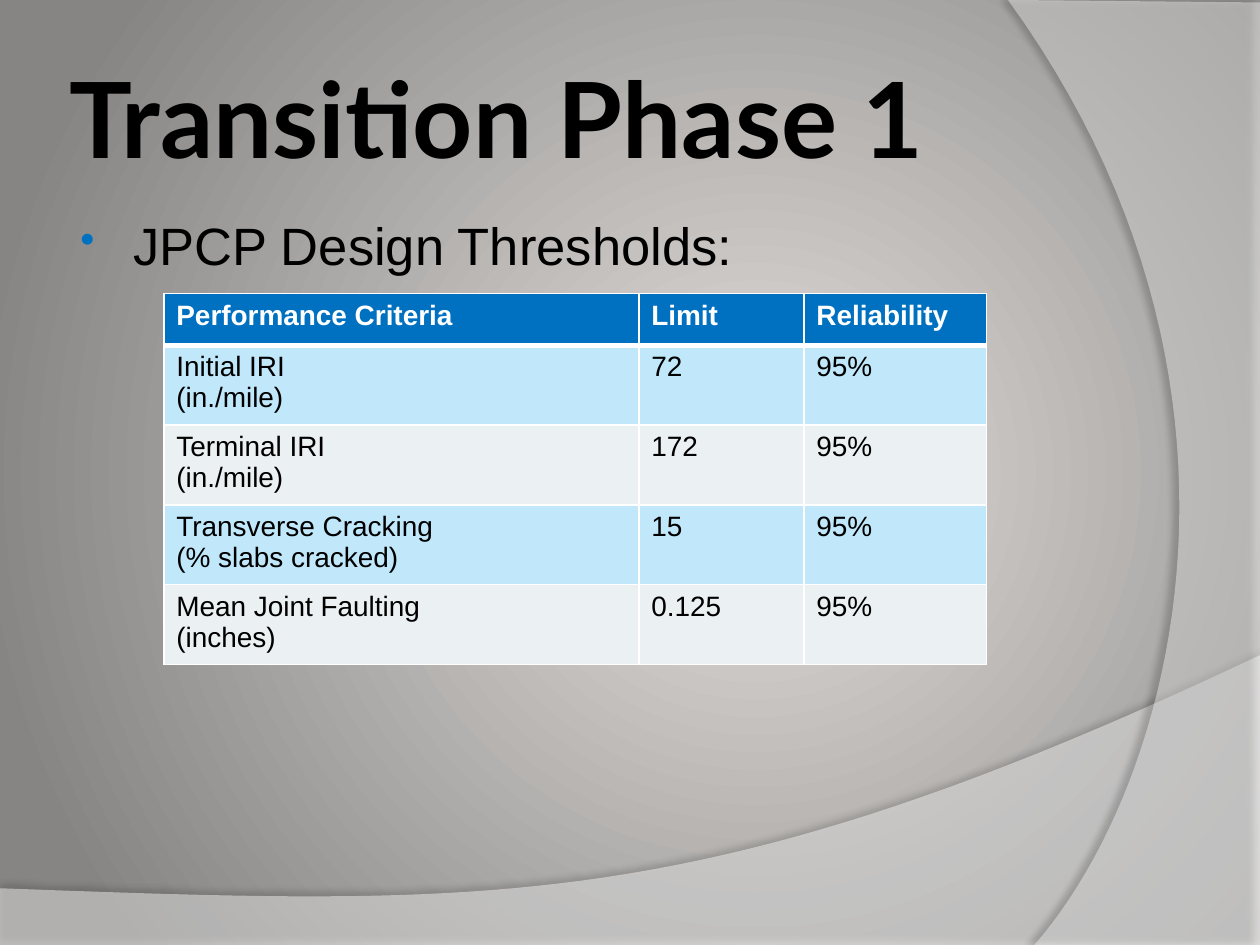
"""Build the slide on JPCP design thresholds."""
from dataclasses import dataclass

from lxml.etree import SubElement
from pptx import Presentation
from pptx.dml.color import RGBColor
from pptx.enum.text import MSO_ANCHOR, MSO_AUTO_SIZE
from pptx.oxml import parse_xml
from pptx.oxml.ns import nsdecls, qn
from pptx.slide import Slide
from pptx.table import _Cell as Cell
from pptx.text.text import TextFrame, _Paragraph as Para
from pptx.util import Inches, Pt

Point = tuple[float, float]


@dataclass(frozen=True)
class Theme:
    glow: str = "E0DDDA"
    edge: str = "878583"
    white: str = "FFFFFF"
    black: str = "000000"
    blue: str = "0070C0"
    bands: tuple[str, str] = ("C0E8FA", "EBF0F2")
    head: str = "Lato"
    body: str = "Arial"
    title: int = 60
    lead: int = 30
    cell: int = 16


@dataclass(frozen=True)
class Wave:
    start: Point
    curve: tuple[Point, Point, Point]
    rest: tuple[Point, ...]
    alpha: int
    shade: int
    dist: float
    angle: int


@dataclass(frozen=True)
class Limit:
    name: str
    unit: str
    value: str
    trust: str = "95%"


THEME = Theme()
WAVES = (
    Wave((10, 5.2), ((5.59, 7.29), (3.91, 7.19), (0, 7.05)),
         ((0, 7.51), (10, 7.51)), 45, 35, 3.5, 270),
    Wave((8.21, 7.5), ((9.35, 6.19), (10.18, 3), (8, 0)),
         ((10, 0.02), (10, 7.5)), 40, 45, 4, 180),
)
HEADS = ("Performance Criteria", "Limit", "Reliability")
LIMITS = (
    Limit("Initial IRI", "(in./mile)", "72"),
    Limit("Terminal IRI", "(in./mile)", "172"),
    Limit("Transverse Cracking", "(% slabs cracked)", "15"),
    Limit("Mean Joint Faulting", "(inches)", "0.125"),
)
WIDTHS = (3.77, 1.31, 1.45)
ROW = 0.41
STEPS = 48


def paint(slide: Slide) -> None:
    """Give the slide its round gradient."""
    slide.background.fill.solid()
    props = slide.background.fill._xPr
    props.remove(props.find(qn("a:solidFill")))
    props.insert(0, parse_xml(
        f'<a:gradFill rotWithShape="1" {nsdecls("a")}><a:gsLst>'
        f'<a:gs pos="0"><a:srgbClr val="{THEME.glow}"/></a:gs>'
        f'<a:gs pos="100000"><a:srgbClr val="{THEME.edge}"/></a:gs></a:gsLst>'
        '<a:path path="circle"><a:fillToRect l="60000" t="50000" r="40000" b="50000"/>'
        '</a:path></a:gradFill>'))


def bend(start: Point, curve: tuple[Point, Point, Point]) -> list[Point]:
    """Return points along a cubic curve, without its start."""
    spots = []
    for step in range(1, STEPS + 1):
        t = step / STEPS
        parts = ((1 - t) ** 3, 3 * t * (1 - t) ** 2, 3 * t * t * (1 - t), t ** 3)
        x, y = (sum(k * p[axis] for k, p in zip(parts, (start, *curve))) for axis in (0, 1))
        spots.append((x, y))
    return spots


def draw_wave(slide: Slide, wave: Wave) -> None:
    """Draw one see-through wave with a soft shadow."""
    spots = [*bend(wave.start, wave.curve), *wave.rest]
    x, y = wave.start
    form = slide.shapes.build_freeform(Inches(x), Inches(y), 1.0)
    form.add_line_segments([(Inches(a), Inches(b)) for a, b in spots], close=True)
    shape = form.convert_to_shape()
    shape.fill.solid()
    shape.fill.fore_color.rgb = RGBColor.from_string(THEME.white)
    shape.line.fill.background()
    props = shape._element.spPr
    tint = props.find(qn("a:solidFill")).find(qn("a:srgbClr"))
    SubElement(tint, qn("a:alpha"), val=str(wave.alpha * 1000))
    props.append(parse_xml(
        f'<a:effectLst {nsdecls("a")}><a:outerShdw blurRad="{Pt(4)}" '
        f'dist="{Pt(wave.dist)}" dir="{wave.angle * 60000}" algn="ctr" rotWithShape="0">'
        f'<a:srgbClr val="{THEME.black}"><a:alpha val="{wave.shade * 1000}"/></a:srgbClr>'
        '</a:outerShdw></a:effectLst>'))


def write(para: Para, text: str, size: int, font: str, color: str, bold: bool = False) -> None:
    """Add one styled run."""
    run = para.add_run()
    run.text = text
    run.font.size = Pt(size)
    run.font.name = font
    run.font.bold = bold
    run.font.color.rgb = RGBColor.from_string(color)


def add_box(slide: Slide, x: float, y: float, w: float, h: float) -> TextFrame:
    """Add a wrapping text box."""
    frame = slide.shapes.add_textbox(Inches(x), Inches(y), Inches(w), Inches(h)).text_frame
    frame.word_wrap = True
    return frame


def add_title(slide: Slide) -> None:
    """Add the slide title."""
    frame = add_box(slide, 0.5, 0.3, 8.17, 1.25)
    frame.vertical_anchor = MSO_ANCHOR.MIDDLE
    frame.margin_left = frame.margin_right = Inches(0.05)
    write(frame.paragraphs[0], "Transition Phase 1", THEME.title, THEME.head, THEME.black, True)


def add_lead(slide: Slide) -> None:
    """Add the bulleted line above the table."""
    frame = add_box(slide, 0.5, 1.64, 8.33, 0.61)
    frame.auto_size = MSO_AUTO_SIZE.SHAPE_TO_FIT_TEXT
    para = frame.paragraphs[0]
    para.space_before = Pt(THEME.lead * 0.2)
    props = para._p.get_or_add_pPr()
    props.set("marL", str(Inches(0.46)))
    props.set("indent", str(Inches(-0.42)))
    SubElement(SubElement(props, qn("a:buClr")), qn("a:srgbClr"), val=THEME.blue)
    SubElement(props, qn("a:buSzPct"), val="80000")
    SubElement(props, qn("a:buChar"), char="•")
    write(para, "JPCP Design Thresholds:", THEME.lead, THEME.body, THEME.black)


def fill_cell(cell: Cell, lines: tuple[str, ...], fill: str, head: bool, under: bool) -> None:
    """Set the borders, fill and text of one cell."""
    props = cell._tc.get_or_add_tcPr()
    wide = {"lnL": 1, "lnR": 1, "lnT": 3 if under else 1, "lnB": 3 if head else 1}
    for side, width in wide.items():
        line = SubElement(props, qn(f"a:{side}"), w=str(Pt(width)))
        SubElement(SubElement(line, qn("a:solidFill")), qn("a:srgbClr"), val=THEME.white)
    cell.fill.solid()
    cell.fill.fore_color.rgb = RGBColor.from_string(fill)
    frame = cell.text_frame
    for at, text in enumerate(lines):
        para = frame.add_paragraph() if at else frame.paragraphs[0]
        write(para, text, THEME.cell, THEME.body, THEME.white if head else THEME.black, head)


def add_grid(slide: Slide) -> None:
    """Add the table of limits."""
    rows = [tuple((head,) for head in HEADS)]
    rows += [((one.name, one.unit), (one.value,), (one.trust,)) for one in LIMITS]
    table = slide.shapes.add_table(
        len(rows), len(WIDTHS), Inches(1.3), Inches(2.33),
        Inches(sum(WIDTHS)), Inches(ROW * len(rows))).table
    for col, width in zip(table.columns, WIDTHS):
        col.width = Inches(width)
    for r, row in enumerate(rows):
        table.rows[r].height = Inches(ROW)
        fill = THEME.bands[(r - 1) % 2] if r else THEME.blue
        for c, lines in enumerate(row):
            fill_cell(table.cell(r, c), lines, fill, r == 0, r == 1)


def main() -> None:
    """Build and save the deck."""
    deck = Presentation()
    deck.slide_width, deck.slide_height = Inches(10), Inches(7.5)
    slide = deck.slides.add_slide(deck.slide_layouts[6])
    paint(slide)
    for wave in WAVES:
        draw_wave(slide, wave)
    add_title(slide)
    add_grid(slide)
    add_lead(slide)
    deck.save("out.pptx")


if __name__ == "__main__":
    main()
